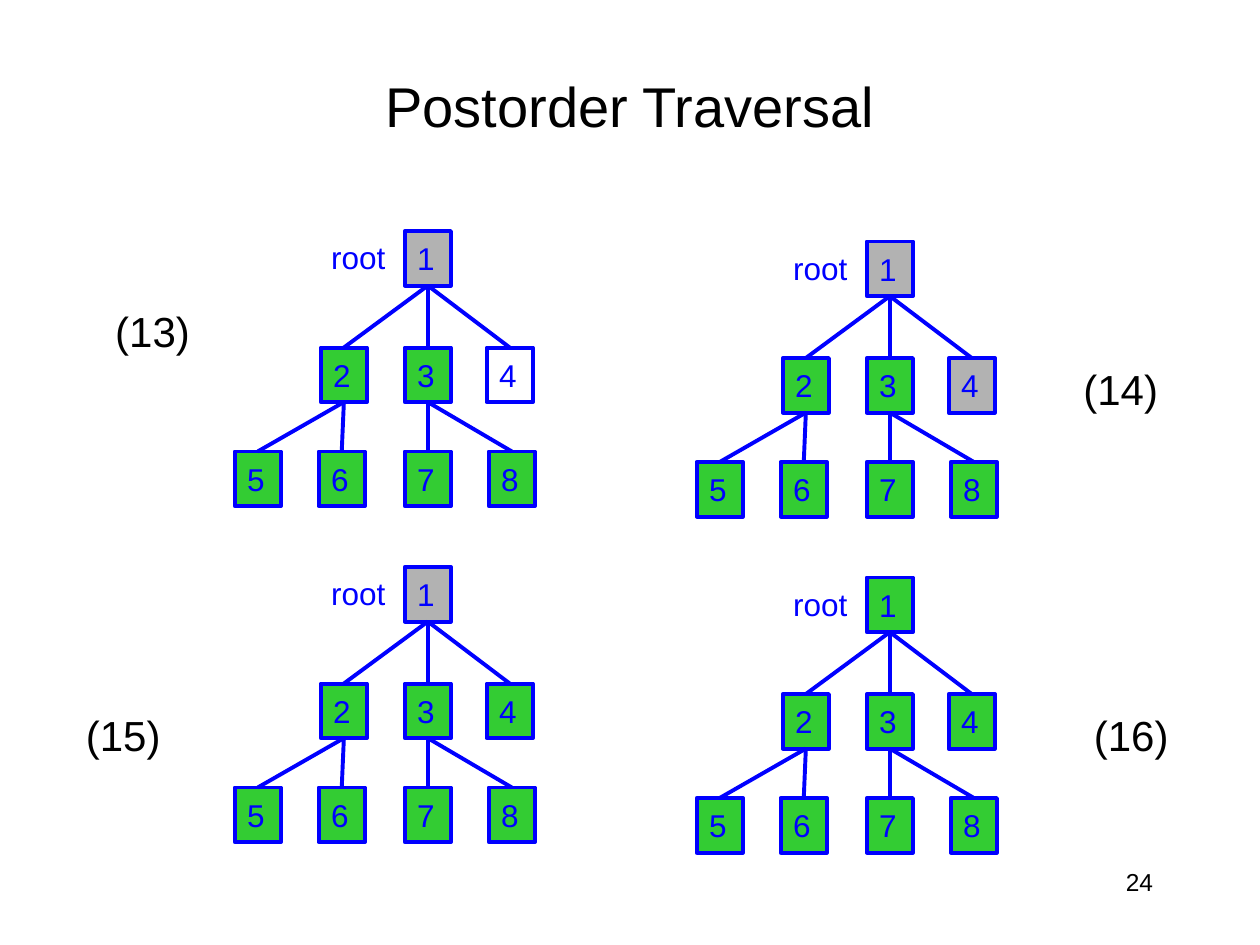
from lxml import etree
from pptx import Presentation
from pptx import util as u
from pptx.dml import color
from pptx.enum import shapes, text
from pptx.oxml import ns

GRID = 12
BLUE, GREEN, GREY, BLACK = "0000FF", "33CC33", "B2B2B2", "000000"
NODE_SIZE = (4.4, 5.2)
NODE_PLACES = {
    1: (16.2, 0),
    2: (8.2, 11.1), 3: (16.2, 11.1), 4: (24, 11.1),
    5: (0, 21), 6: (8, 21), 7: (16.2, 21), 8: (24.2, 21),
}
CHILDREN = {1: (3, 2, 4), 2: (5, 6), 3: (7, 8)}
STEPS = [
    ("(13)", (9.8, 28.5), (22.35, 22), {1: GREY, 4: None}),
    ("(14)", (102, 34), (66.35, 23), {1: GREY, 4: GREY}),
    ("(15)", (7, 67), (22.35, 54), {1: GREY}),
    ("(16)", (103, 67), (66.35, 55), {}),
]


def rgb(value):
    """Turn a hex string into a colour."""
    return color.RGBColor.from_string(value)


def cells(*counts):
    """Turn counts of grid cells into lengths."""
    return [u.Inches(count / GRID) for count in counts]


def write(shape, wording, size=18, ink=BLUE, align=text.PP_ALIGN.LEFT,
          anchor=text.MSO_ANCHOR.MIDDLE, wrap=False):
    """Put formatted wording into a shape."""
    frame = shape.text_frame
    frame.word_wrap = wrap
    frame.vertical_anchor = anchor
    paragraph = frame.paragraphs[0]
    paragraph.alignment = align
    run = paragraph.add_run()
    run.text = wording
    run.font.size = u.Pt(size)
    run.font.name = "Arial"
    run.font.color.rgb = rgb(ink)


def add_label(slide, wording, box, **style):
    """Add a text box over a box of grid cells."""
    write(slide.shapes.add_textbox(*cells(*box)), wording, **style)


def add_node(slide, number, place, fill):
    """Add one numbered tree node."""
    node = slide.shapes.add_shape(shapes.MSO_SHAPE.RECTANGLE, *cells(*place, *NODE_SIZE))
    node.shadow.inherit = False
    if fill:
        node.fill.solid()
        node.fill.fore_color.rgb = rgb(fill)
    else:
        node.fill.background()
    node.line.color.rgb = rgb(BLUE)
    node.line.width = u.Pt(2.25)
    write(node, str(number))
    return node


def add_branch(slide, parent, child):
    """Join the bottom of a parent to the top of its child."""
    branch = slide.shapes.add_connector(shapes.MSO_CONNECTOR.STRAIGHT, 0, 0, 0, 0)
    branch.begin_connect(parent, 2)
    branch.end_connect(child, 0)
    branch.line.color.rgb = rgb(BLUE)
    branch.line.width = u.Pt(2.25)
    etree.SubElement(branch.element.spPr, ns.qn("a:effectLst"))


def add_tree(slide, corner, fills):
    """Draw the tree from its corner, green unless a node has its own fill."""
    left, top = corner
    nodes = {
        number: add_node(slide, number, (left + x, top + y), fills.get(number, GREEN))
        for number, (x, y) in NODE_PLACES.items()
    }
    for parent, children in CHILDREN.items():
        for child in children:
            add_branch(slide, nodes[parent], nodes[child])
    add_label(slide, "root", (left + 8, top + 0.1, 7.6, 4.8))


def add_title(slide, wording, box):
    """Place and format the title placeholder."""
    title = slide.shapes.title
    title.left, title.top, title.width, title.height = cells(*box)
    write(title, wording, size=32, ink=BLACK, align=text.PP_ALIGN.CENTER, wrap=True)


def main():
    """Build and save the slide."""
    deck = Presentation()
    deck.slide_width, deck.slide_height = cells(120, 90)
    slide = deck.slides.add_slide(deck.slide_layouts[5])
    add_title(slide, "Postorder Traversal", (9, 5, 102, 10))
    for step, place, corner, fills in STEPS:
        add_tree(slide, corner, fills)
        add_label(slide, step, (*place, 9.6, 6), size=24, ink=BLACK)
    add_label(slide, "24", (86, 82, 25, 6), size=14, ink=BLACK,
              align=text.PP_ALIGN.RIGHT, anchor=text.MSO_ANCHOR.TOP, wrap=True)
    deck.save("out.pptx")


if __name__ == "__main__":
    main()
